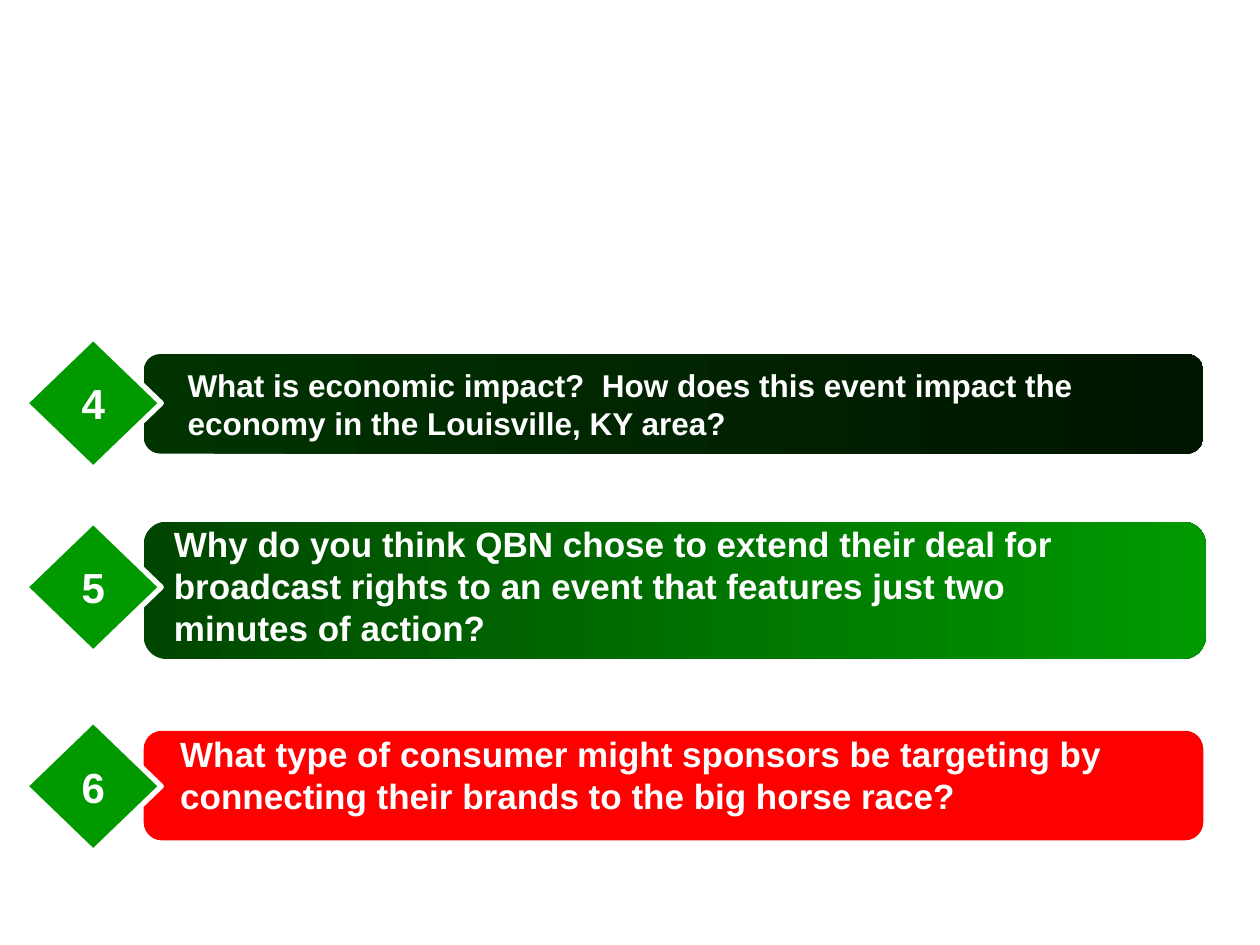
import dataclasses

import pptx
import pptx.dml.color
import pptx.enum.shapes
import pptx.enum.text
import pptx.util

Inches = pptx.util.Inches
Shape = pptx.enum.shapes.MSO_SHAPE
Align = pptx.enum.text.PP_ALIGN


@dataclasses.dataclass(frozen=True)
class Theme:
    """Colours, font and type sizes of the slide."""
    font: str = "Arial"
    white: str = "FFFFFF"
    green: str = "009900"
    red: str = "FF0000"
    forest: tuple = ("003300", "001600")
    meadow: tuple = ("004600", "009900")
    number_size: int = 24
    large_size: int = 20
    small_size: int = 18
    outline: int = 3


THEME = Theme()


def rgb(code):
    """Return the colour for a hex code."""
    return pptx.dml.color.RGBColor.from_string(code)


def write_text(frame, text, *, size, align=Align.LEFT, inset=0.0, wrap=True):
    """Write each line of text as a bold white paragraph, centred vertically."""
    frame.word_wrap = wrap
    frame.vertical_anchor = pptx.enum.text.MSO_ANCHOR.MIDDLE
    frame.margin_left = Inches(inset)
    frame.margin_right = Inches(0)
    for index, line in enumerate(text.split("\n")):
        paragraph = frame.paragraphs[0] if index == 0 else frame.add_paragraph()
        paragraph.alignment = align
        run = paragraph.add_run()
        run.text = line
        run.font.name = THEME.font
        run.font.size = pptx.util.Pt(size)
        run.font.bold = True
        run.font.color.rgb = rgb(THEME.white)


def add_bar(slide, box, colours):
    """Place a rounded bar, with a left-to-right gradient when given two colours."""
    bar = slide.shapes.add_shape(Shape.ROUNDED_RECTANGLE, *map(Inches, box))
    bar.shadow.inherit = False
    bar.line.fill.background()
    if isinstance(colours, str):
        bar.fill.solid()
        bar.fill.fore_color.rgb = rgb(colours)
    else:
        bar.fill.gradient()
        bar.fill.gradient_angle = 0
        for stop, colour in zip(bar.fill.gradient_stops, colours):
            stop.color.rgb = rgb(colour)
    return bar


def add_number(slide, box, number):
    """Place a white-edged diamond holding the question number."""
    diamond = slide.shapes.add_shape(Shape.DIAMOND, *map(Inches, box))
    diamond.shadow.inherit = False
    diamond.fill.solid()
    diamond.fill.fore_color.rgb = rgb(THEME.green)
    diamond.line.color.rgb = rgb(THEME.white)
    diamond.line.width = pptx.util.Pt(THEME.outline)
    write_text(diamond.text_frame, number, size=THEME.number_size,
               align=Align.CENTER, wrap=False)


def add_question(slide, box, number, number_top, colours, text, size, inset, text_box=None):
    """Place one question: its bar, wording and numbered diamond."""
    bar = add_bar(slide, box, colours)
    wording = slide.shapes.add_textbox(*map(Inches, text_box)) if text_box else bar
    write_text(wording.text_frame, text, size=size, inset=inset)
    add_number(slide, (0.2, number_top, 1.08, 1.04), number)


def main():
    """Build the slide and save it."""
    deck = pptx.Presentation()
    deck.slide_width, deck.slide_height = Inches(10), Inches(7.5)
    slide = deck.slides.add_slide(deck.slide_layouts[6])
    add_question(
        slide, (1.14, 2.81, 8.41, 0.79), "4", 2.68, THEME.forest,
        "What is economic impact?  How does this event impact the\n"
        "economy in the Louisville, KY area?",
        THEME.small_size, 0.31)
    add_question(
        slide, (1.14, 4.14, 8.43, 1.09), "5", 4.14, THEME.meadow,
        "Why do you think QBN chose to extend their deal for\n"
        "broadcast rights to an event that features just two\n"
        "minutes of action?",
        THEME.large_size, 0.16, (1.22, 4.06, 8.05, 1.18))
    add_question(
        slide, (1.14, 5.8, 8.41, 0.87), "6", 5.72, THEME.red,
        "What type of consumer might sponsors be targeting by\n"
        "connecting their brands to the big horse race?",
        THEME.large_size, 0.13, (1.3, 5.79, 8.05, 0.71))
    deck.save("out.pptx")


if __name__ == "__main__":
    main()
